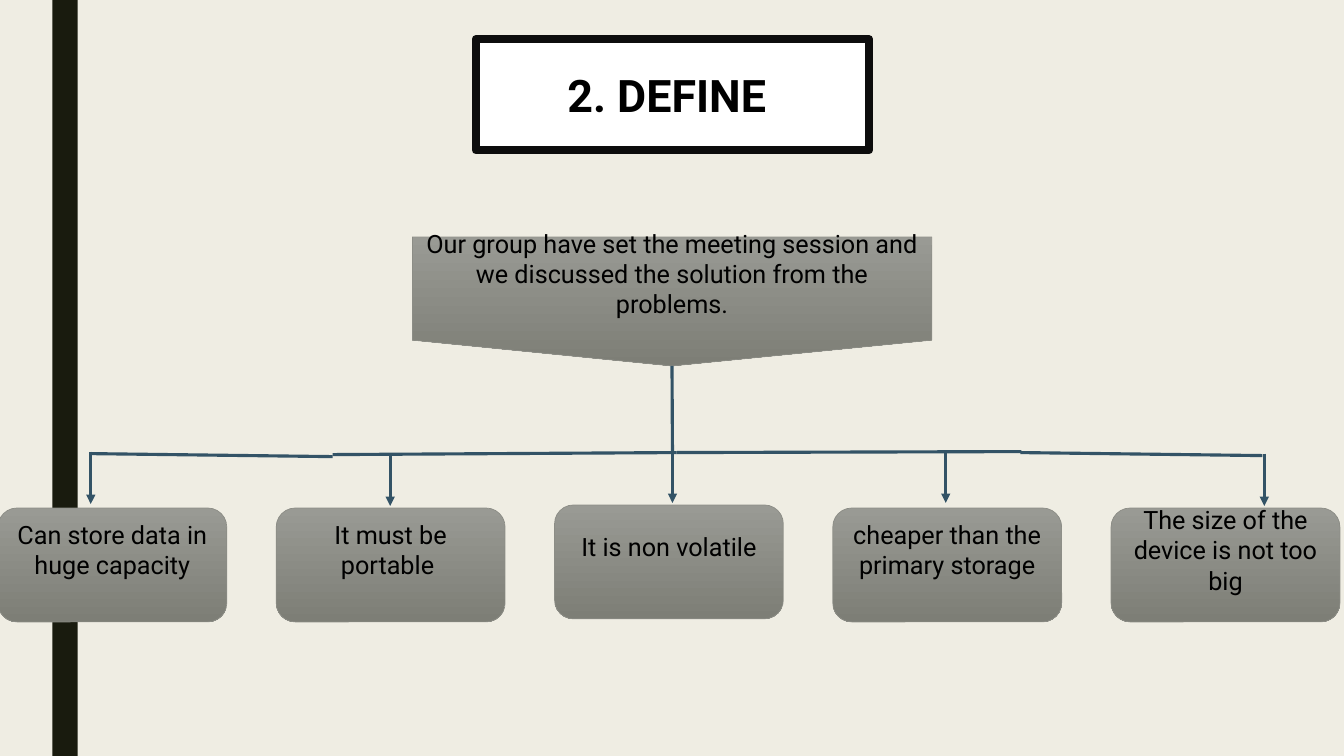
from lxml import etree
from pptx import Presentation
from pptx.dml.color import RGBColor
from pptx.enum.shapes import MSO_CONNECTOR, MSO_SHAPE
from pptx.enum.text import MSO_ANCHOR, PP_ALIGN
from pptx.oxml.ns import qn
from pptx.util import Inches, Pt

RECTANGLE = MSO_SHAPE.RECTANGLE
ROUNDED = MSO_SHAPE.ROUNDED_RECTANGLE
PENTAGON = MSO_SHAPE.FLOWCHART_OFFPAGE_CONNECTOR
STRAIGHT = MSO_CONNECTOR.STRAIGHT
MIDDLE = MSO_ANCHOR.MIDDLE
CENTER = PP_ALIGN.CENTER

COLORS = {
    "background": "EFEDE3",
    "bar": "191B0E",
    "title_fill": "FFFFFF",
    "title_border": "0D0D0D",
    "text": "000000",
    "box_top": "999A94",
    "box_bottom": "7D7E76",
    "box_border": "8C8D86",
    "branch": "335366",
}


def color(name):
    return RGBColor.from_string(COLORS[name])


class DefineSlide:
    font = "Roboto"
    body_size = 18

    def __init__(self, deck):
        self.page = deck.slides.add_slide(deck.slide_layouts[6])
        fill = self.page.background.fill
        fill.solid()
        fill.fore_color.rgb = color("background")

    def shape(self, kind, left, top, width, height):
        shape = self.page.shapes.add_shape(
            kind, Inches(left), Inches(top), Inches(width), Inches(height))
        shape.shadow.inherit = False
        return shape

    def panel(self, left, top, width, height, fill, border=None, border_width=0):
        panel = self.shape(RECTANGLE, left, top, width, height)
        panel.fill.solid()
        panel.fill.fore_color.rgb = color(fill)
        if border:
            panel.line.color.rgb = color(border)
            panel.line.width = Pt(border_width)
        else:
            panel.line.fill.background()
        return panel

    def label(self, shape, text, size, bold=False):
        frame = shape.text_frame
        frame.word_wrap = True
        frame.vertical_anchor = MIDDLE
        frame.text = text
        para = frame.paragraphs[0]
        para.alignment = CENTER
        font = para.runs[0].font
        font.name = self.font
        font.size = Pt(size)
        font.bold = bold
        font.color.rgb = color("text")

    def gradient_box(self, kind, left, top, width, height, text):
        box = self.shape(kind, left, top, width, height)
        box.fill.gradient()
        box.fill.gradient_angle = 270
        for stop, name in zip(box.fill.gradient_stops, ("box_top", "box_bottom")):
            stop.color.rgb = color(name)
        box.line.color.rgb = color("box_border")
        box.line.width = Pt(0.5)
        self.label(box, text, self.body_size)
        # The text sits half a line above the middle
        box.text_frame.margin_bottom = Inches(0.35)
        return box

    def line(self, start, end, arrow=False):
        line = self.page.shapes.add_connector(
            STRAIGHT, *(Inches(length) for length in start + end))
        line.line.color.rgb = color("branch")
        line.line.width = Pt(2.25)
        properties = line._element.spPr
        if arrow:
            etree.SubElement(properties.find(qn("a:ln")), qn("a:tailEnd"), type="triangle")
        etree.SubElement(properties, qn("a:effectLst"))
        return line


def main():
    deck = Presentation()
    deck.slide_width = Inches(13.33)
    deck.slide_height = Inches(7.5)
    slide = DefineSlide(deck)

    # Side bar and title
    slide.panel(0.52, 0, 0.25, 7.5, "bar")
    title = slide.panel(4.72, 0.39, 3.9, 1.1, "title_fill", "title_border", 6)
    slide.label(title, "2. DEFINE ", 32, bold=True)

    # Statement and its stem
    statement = slide.gradient_box(
        PENTAGON, 4.09, 2.35, 5.15, 1.28,
        "Our group have set the meeting session and we discussed "
        "the solution from the problems.")
    stem = slide.line((6.67, 3.63), (6.67, 4.49))
    stem.begin_connect(statement, 2)

    # Criteria: text, box top, arrow x, arrow top
    criteria = [
        ("Can store data in huge capacity", 5.04, 0.9, 4.48),
        ("It must be portable ", 5.04, 3.87, 4.5),
        ("It is non volatile", 5.01, 6.67, 4.47),
        ("cheaper than the primary storage", 5.04, 9.38, 4.47),
        ("The size of the device is not too big", 5.04, 12.54, 4.5),
    ]
    for index, (text, box_top, arrow_x, arrow_top) in enumerate(criteria):
        slide.gradient_box(ROUNDED, -0.02 + 2.76 * index, box_top, 2.27, 1.13, text)
        slide.line((arrow_x, arrow_top), (arrow_x, arrow_top + 0.52), arrow=True)

    # Crossbar segments
    for start, end in [
        ((3.3, 4.53), (0.89, 4.5)),
        ((6.71, 4.49), (3.3, 4.51)),
        ((10.13, 4.48), (6.71, 4.49)),
        ((12.52, 4.52), (10.12, 4.49)),
    ]:
        slide.line(start, end)

    deck.save("out.pptx")


if __name__ == "__main__":
    main()
